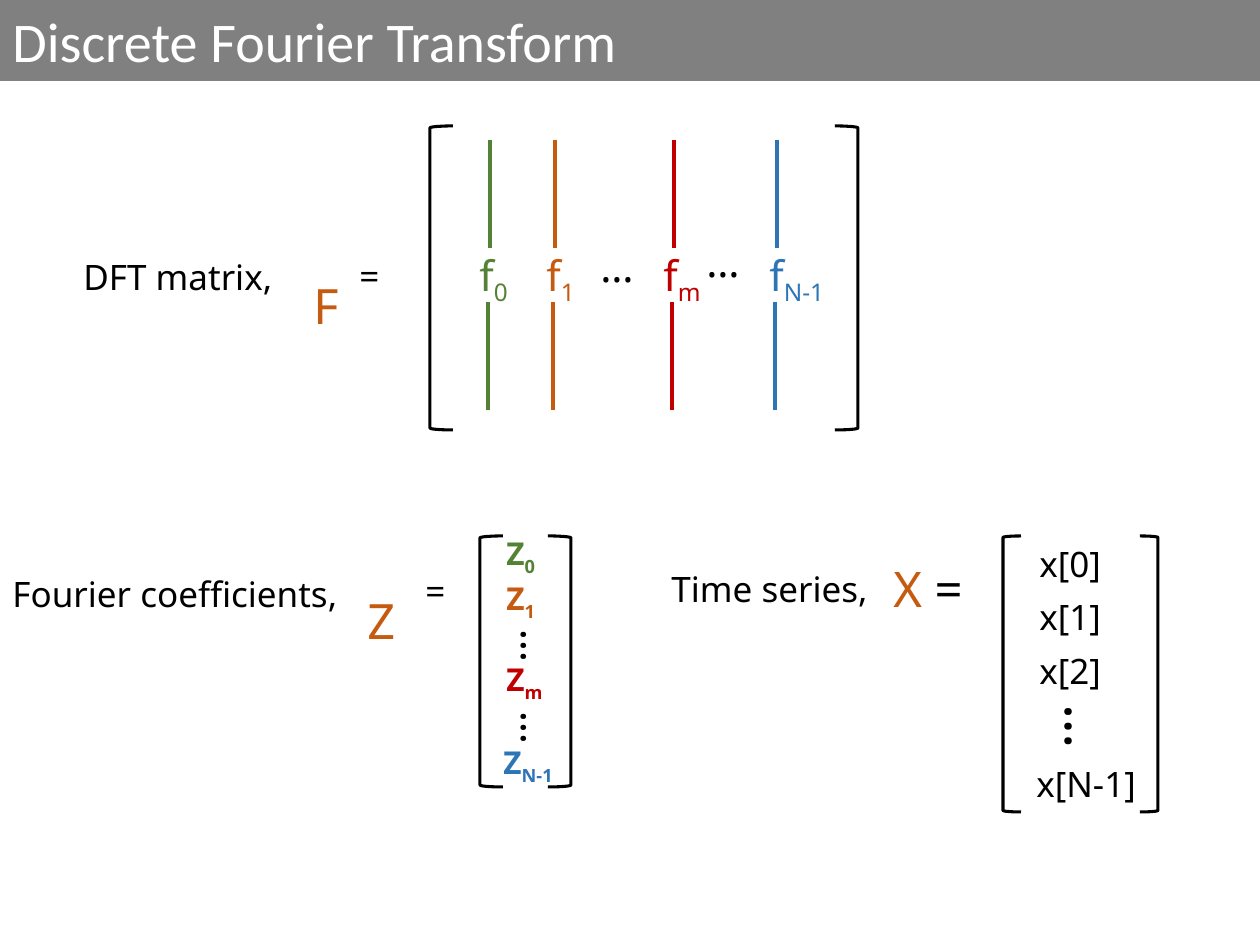
"""Builds the Discrete Fourier Transform slide: DFT matrix, coefficients and time series."""
from lxml import etree
from pptx import Presentation, util as u
from pptx.dml.color import RGBColor
from pptx.enum import shapes, text
from pptx.oxml.ns import qn

PX = 914400 // 126
BLACK, GREEN, ORANGE, RED, BLUE = "000000", "548235", "C55A11", "C00000", "2E75B6"


def paint(target, color):
    target.rgb = RGBColor.from_string(color)


def write(left, top, width, height, size, spans, bold=False, wrap=True, angle=0):
    box = slide.shapes.add_textbox(left * PX, top * PX, width * PX, height * PX)
    box.rotation = angle
    box.text_frame.word_wrap = wrap
    box.text_frame.auto_size = text.MSO_AUTO_SIZE.SHAPE_TO_FIT_TEXT
    para = box.text_frame.paragraphs[0]
    for words, color, lowered in spans:
        span = para.add_run()
        span.text = words
        span.font.size = u.Pt(size)
        span.font.name = "Noto Sans"
        span.font.bold = bold
        paint(span.font.color, color)
        if lowered:
            span.font._element.set("baseline", "-25000")


deck = Presentation()
deck.slide_width, deck.slide_height = 1260 * PX, 945 * PX
slide = deck.slides.add_slide(deck.slide_layouts[6])

banner = slide.shapes.add_shape(shapes.MSO_SHAPE.RECTANGLE, 0, 0, 1260 * PX, 81 * PX)
banner.shadow.inherit = False
banner.fill.solid()
paint(banner.fill.fore_color, "808080")
banner.line.fill.background()
banner.text_frame.word_wrap = True
banner.text_frame.auto_size = text.MSO_AUTO_SIZE.SHAPE_TO_FIT_TEXT
para = banner.text_frame.paragraphs[0]
para.text = "Discrete Fourier Transform"
para.alignment = text.PP_ALIGN.LEFT
title = para.runs[0].font
title.size, title.name = u.Pt(32), "Calibri"
paint(title.color, "FFFFFF")

for left, top, width, label in [
    (71, 249, 244, "DFT matrix,"),
    (347, 248, 71, "="),
    (0, 566, 367, "Fourier coefficients,"),
    (413, 563, 71, "="),
    (659, 561, 367, "Time series,"),
]:
    write(left, top, width, 55, 20, [(label, BLACK, False)])

for left, top, symbol in [(301, 213, "F"), (355, 528, "Z")]:
    write(left, top, 53, 81, 48, [(symbol, ORANGE, True)])
write(881, 552, 103, 72, 28, [("X", ORANGE, False), (" =", BLACK, False)], wrap=False)

for left, right, top, width, height in [
    (430, 835, 126, 23, 304),
    (480, 548, 536, 23, 251),
    (1003, 1140, 536, 18, 276),
]:
    for edge in (left, right):
        bracket = slide.shapes.add_shape(
            shapes.MSO_SHAPE.LEFT_BRACKET, edge * PX, top * PX, width * PX, height * PX)
        bracket.shadow.inherit = False
        bracket.fill.background()
        paint(bracket.line.color, BLACK)
        bracket.line.width = u.Pt(1.75)
        if edge == right:
            bracket._element.spPr.find(qn("a:xfrm")).set("flipH", "1")

for index, color, left, width, line_x, z_left, z_top, z_width in [
    ("0", GREEN, 467, 74, 490, 494, 528, 72),
    ("1", ORANGE, 534, 74, 555, 494, 573, 72),
    ("m", RED, 651, 74, 674, 494, 654, 72),
    ("N-1", BLUE, 757, 101, 777, 491, 737, 91),
]:
    write(left, 243, width, 63, 24, [("f", color, False), (index, color, True)])
    write(z_left, z_top, z_width, 50, 18, [("Z", color, False), (index, color, True)], bold=True)
    for x, top in [(line_x, 140), (line_x - 2, 302)]:
        column = slide.shapes.add_connector(
            shapes.MSO_CONNECTOR.STRAIGHT, x * PX, top * PX, x * PX, (top + 108) * PX)
        paint(column.line.color, color)
        column.line.width = u.Pt(2)
        etree.SubElement(column._element.spPr, qn("a:effectLst"))

for left, top, angle in [(588, 234, 0), (694, 229, 0), (472, 606, 270), (472, 688, 270)]:
    write(left, top, 74, 63, 24, [("…", BLACK, False)], angle=angle)
write(1047, 692, 81, 81, 32, [("…", BLACK, False)], angle=90)

for left, top, width, sample in [
    (1027, 536, 89, "x[0]"),
    (1027, 589, 89, "x[1]"),
    (1027, 643, 89, "x[2]"),
    (1024, 756, 127, "x[N-1]"),
]:
    write(left, top, width, 55, 20, [(sample, BLACK, False)], wrap=False)

deck.save("out.pptx")
